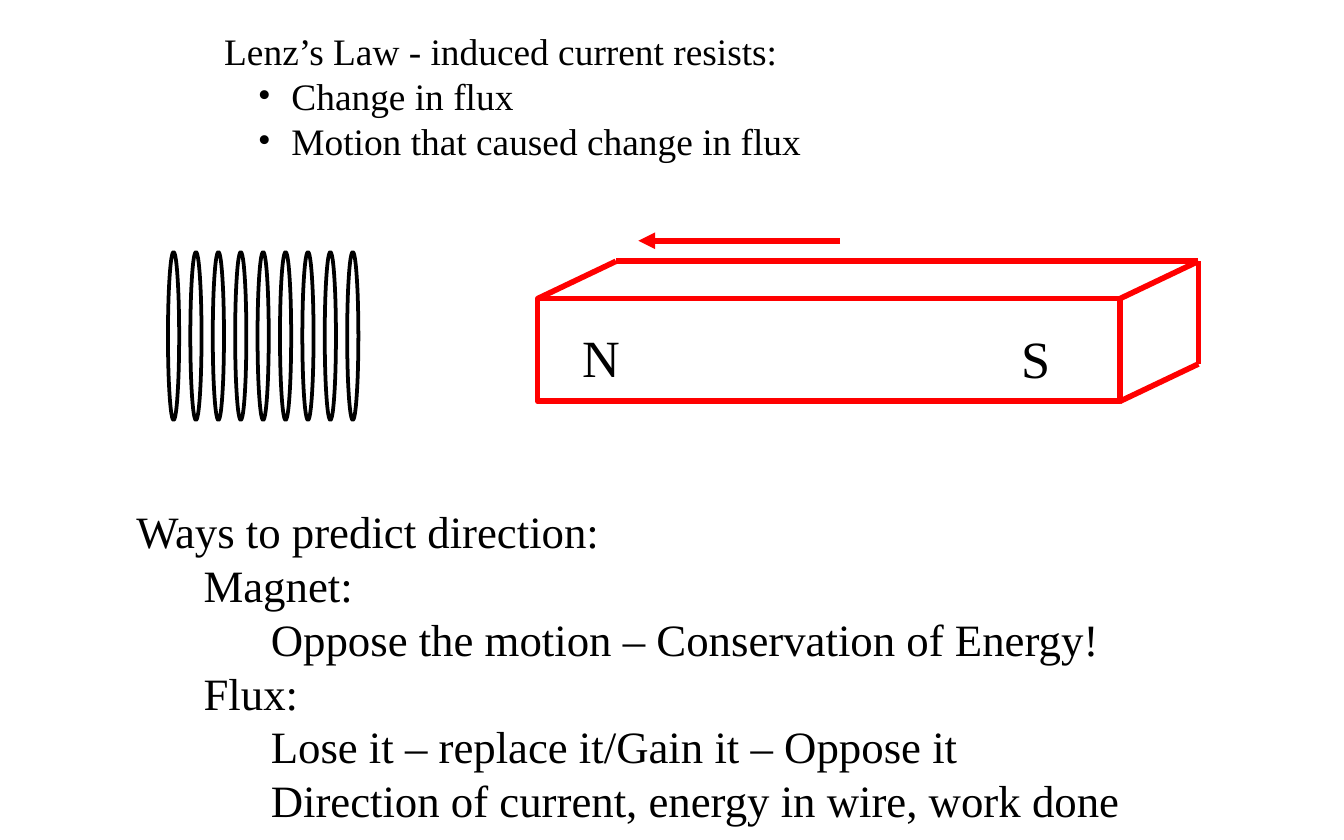
import pptx
import pptx.util
import pptx.dml.color
import pptx.enum.shapes
import pptx.enum.text
import pptx.oxml.ns
import lxml.etree

COLORS = {"ink": "000000", "magnet": "FF0000"}
FONT = "Times New Roman"
qn = pptx.oxml.ns.qn
rgb = pptx.dml.color.RGBColor.from_string
MSO = pptx.enum.shapes.MSO_SHAPE

prs = pptx.Presentation()
prs.slide_width = pptx.util.Inches(10)
prs.slide_height = pptx.util.Inches(6.25)
s = prs.slides.add_slide(prs.slide_layouts[6])
COL = prs.slide_width / 120
ROW = prs.slide_height / 450


def place(col, row):
    return int(col * COL), int(row * ROW)


def add_text(box, size, lines, wrap=False):
    sp = s.shapes.add_textbox(*place(*box[:2]), *place(*box[2:]))
    tf = sp.text_frame
    tf.word_wrap = wrap
    tf.auto_size = pptx.enum.text.MSO_AUTO_SIZE.SHAPE_TO_FIT_TEXT
    tf.margin_top = pptx.util.Inches(0.07)
    tf.margin_bottom = pptx.util.Inches(0.03)
    for i, (level, bullet, text) in enumerate(lines):
        p = tf.paragraphs[0] if i == 0 else tf.add_paragraph()
        p.level = level
        p.line_spacing = pptx.util.Pt(size * 1.2)
        pPr = p._p.get_or_add_pPr()
        pPr.set("marL", str(pptx.util.Inches(0.5 * level)))
        pPr.set("indent", str(pptx.util.Inches(-0.25 if bullet else 0)))
        if bullet:
            lxml.etree.SubElement(pPr, qn("a:buFont")).set("typeface", FONT)
            lxml.etree.SubElement(pPr, qn("a:buChar")).set("char", bullet)
        else:
            lxml.etree.SubElement(pPr, qn("a:buNone"))
        r = p.add_run()
        r.text = text
        r.font.name = FONT
        r.font.size = pptx.util.Pt(size)
        r.font.color.rgb = rgb(COLORS["ink"])


add_text((18.84, 10, 55.4, 80), 20, [
    (0, "", "Lenz’s Law - induced current resists:"),
    (1, "•", "Change in flux"),
    (1, "•", "Motion that caused change in flux"),
])

left, right, depth = 48, 100, 7
top, bottom, rise = 160, 215, 20
outlines = [(MSO.RECTANGLE, (left, top, right - left, bottom - top), "magnet", 3)]
outlines += [(MSO.OVAL, (15 + 2 * i, 135, 1, 90), "ink", 2) for i in range(9)]
for kind, box, color, width in outlines:
    sp = s.shapes.add_shape(kind, *place(*box[:2]), *place(*box[2:]))
    sp.shadow.inherit = False
    sp.fill.background()
    sp.line.color.rgb = rgb(COLORS[color])
    sp.line.width = pptx.util.Pt(width)

back_left = (left + depth, top - rise)
back_right = (right + depth, top - rise)
back_bottom = (right + depth, bottom - rise)
edges = [
    ((left, top), back_left),
    (back_left, back_right),
    ((right, top), back_right),
    (back_right, back_bottom),
    ((right, bottom), back_bottom),
    ((75, 129), (57, 129)),
]
for start, end in edges:
    line = s.shapes.add_connector(
        pptx.enum.shapes.MSO_CONNECTOR.STRAIGHT, *place(*start), *place(*end))
    line.line.color.rgb = rgb(COLORS["magnet"])
    line.line.width = pptx.util.Pt(3)
    lxml.etree.SubElement(line._element.spPr, qn("a:effectLst"))
motion = line
lxml.etree.SubElement(motion.line._get_or_add_ln(), qn("a:tailEnd")).set("type", "triangle")

add_text((50.8, 169, 5.9, 41), 28, [(0, "", "N")])
add_text((90, 170, 5, 41), 28, [(0, "", "S")])

add_text((11, 265, 103, 181), 24, [
    (0, "", "Ways to predict direction:"),
    (1, "", "Magnet:"),
    (2, "", "Oppose the motion – Conservation of Energy!"),
    (1, "", "Flux:"),
    (2, "", "Lose it – replace it/Gain it – Oppose it"),
    (2, "", "Direction of current, energy in wire, work done"),
], wrap=True)

prs.save("out.pptx")
